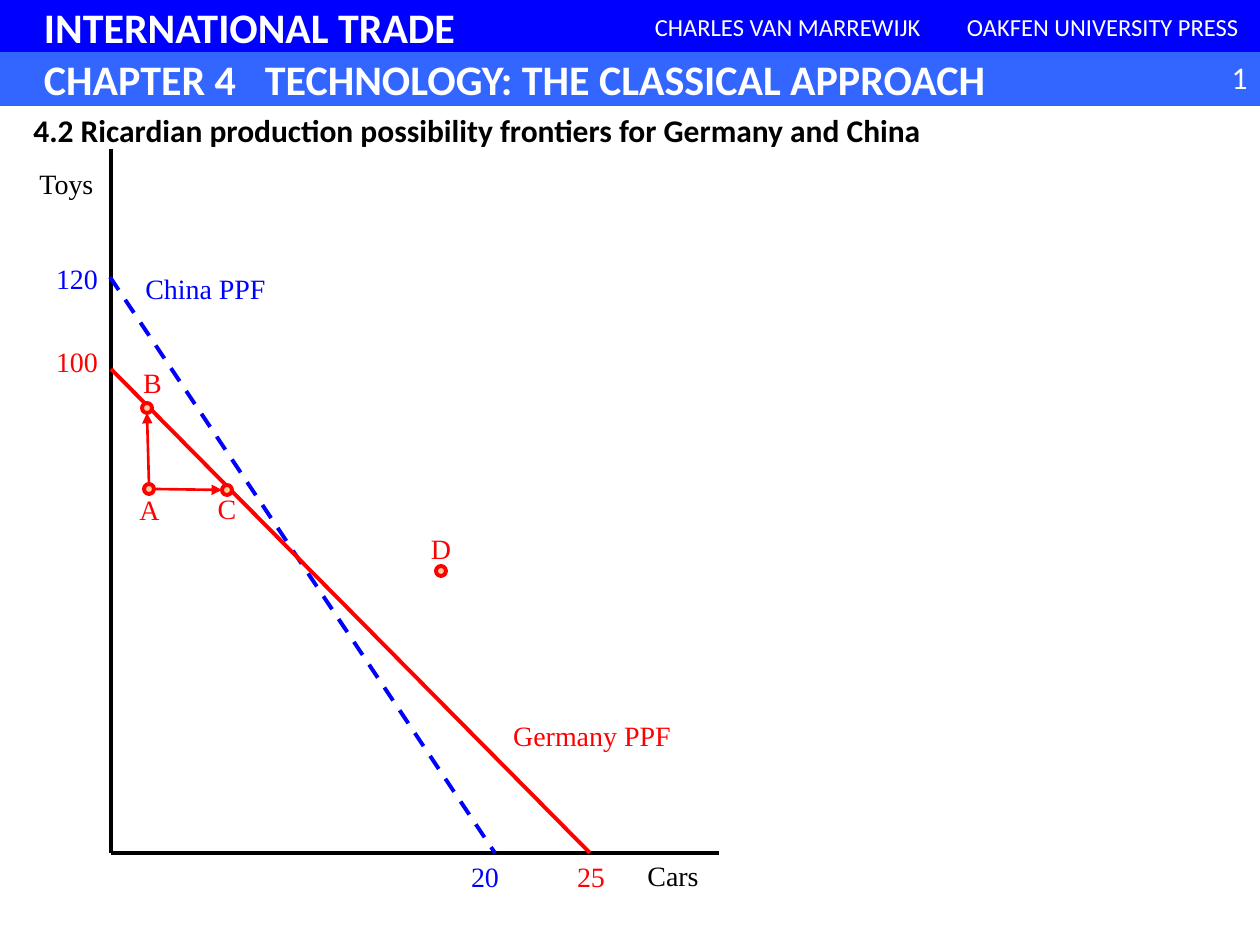
from lxml import etree
from pptx import Presentation
from pptx.dml.color import RGBColor
from pptx.enum.dml import MSO_LINE as Dash
from pptx.enum.shapes import MSO_CONNECTOR as Link, MSO_SHAPE as Shape
from pptx.enum.text import MSO_ANCHOR as Anchor, PP_ALIGN as Align
from pptx.oxml.ns import qn
from pptx.util import Emu, Pt

BLACK, WHITE, BLUE, RED = "000000", "FFFFFF", "0000FF", "FF0000"
SKY, PEACH = "3366FF", "FFCC99"
SERIF, SANS = "Times New Roman", "Calibri"
DOT = 10
ROW = 50


def px(count):
    return Emu(round(count * 914400 / 126))


def rgb(code):
    return RGBColor.from_string(code)


def write(shape, text, size, color, face, align, bold=False):
    para = shape.text_frame.paragraphs[0]
    para.text = text
    para.alignment = align
    font = para.font
    font.name, font.size, font.bold = face, Pt(size), bold
    font.color.rgb = rgb(color)
    return para


def add_solid(slide, kind, x, y, wide, high, fill, edge=None, weight=0.75):
    shape = slide.shapes.add_shape(kind, px(x), px(y), px(wide), px(high))
    shape.shadow.inherit = False
    shape.fill.solid()
    shape.fill.fore_color.rgb = rgb(fill)
    if edge:
        shape.line.color.rgb = rgb(edge)
        shape.line.width = Pt(weight)
    else:
        shape.line.fill.background()
    return shape


def add_band(slide, x, y, wide, high, fill, text, size, align, edge=None, inset=13):
    band = add_solid(slide, Shape.RECTANGLE, x, y, wide, high, fill, edge)
    band.text_frame.margin_left = px(inset)
    band.text_frame.vertical_anchor = Anchor.MIDDLE
    return write(band, text, size, WHITE, SANS, align, size == 24)


def add_tab(para, place):
    props = para._p.get_or_add_pPr()
    tabs = etree.Element(qn("a:tabLst"))
    etree.SubElement(tabs, qn("a:tab"), pos=str(px(place)), algn="l")
    props.find(qn("a:defRPr")).addprevious(tabs)


def add_text(slide, text, x, y, wide, color, size=16, face=SERIF,
             align=Align.CENTER, bold=False, wrap=False):
    box = slide.shapes.add_textbox(px(x), px(y), px(wide), px(ROW))
    box.text_frame.word_wrap = wrap
    write(box, text, size, color, face, align, bold)


def add_line(slide, start, end, color, weight=2.25, dash=None, arrow=False):
    line = slide.shapes.add_connector(Link.STRAIGHT, *map(px, start + end))
    line.line.color.rgb = rgb(color)
    line.line.width = Pt(weight)
    if dash:
        line.line.dash_style = dash
    if arrow:
        etree.SubElement(line.line._get_or_add_ln(), qn("a:tailEnd"), type="triangle")
    etree.SubElement(line._element.spPr, qn("a:effectLst"))


def add_header(slide):
    add_band(slide, 0, 0, 1260, 53, BLUE, "INTERNATIONAL TRADE", 24, Align.LEFT, inset=44)
    add_band(slide, 630, 0, 315, 53, BLUE, "CHARLES VAN MARREWIJK", 14, Align.CENTER, BLUE)
    add_band(slide, 945, 1, 315, 52, BLUE, "OAKFEN UNIVERSITY PRESS", 14, Align.CENTER, BLUE)
    title = add_band(slide, 0, 53, 1260, 52, SKY,
                     "CHAPTER 4\tTECHNOLOGY: THE CLASSICAL APPROACH",
                     24, Align.LEFT, SKY, 44)
    add_tab(title, 221)
    add_text(slide, "1", 1176, 52, 84, WHITE, 18, SANS, Align.RIGHT, wrap=True)
    add_text(slide, "4.2 Ricardian production possibility frontiers for Germany and China",
             21, 105, 955, BLACK, 18, SANS, Align.LEFT, True, True)


def add_graph(slide):
    root = (111, 853)
    add_line(slide, (111, 149), root, BLACK)
    add_line(slide, root, (719, 853), BLACK)
    add_line(slide, (110, 277), (495, 853), BLUE, dash=Dash.DASH)
    add_line(slide, (111, 369), (590, 853), RED)
    for x, y in ((142, 403), (222, 485), (144, 484), (436, 566)):
        add_solid(slide, Shape.OVAL, x, y, DOT, DOT, PEACH, RED, 2.25)
    add_line(slide, (154, 489), (222, 490), RED, 1.5, arrow=True)
    add_line(slide, (149, 484), (147, 413), RED, 1.5, arrow=True)


def add_labels(slide):
    labels = (
        ("Toys", 21, 160, 91, BLACK),
        ("Cars", 627, 852, 92, BLACK),
        ("120", 38, 255, 78, BLUE),
        ("20", 455, 853, 60, BLUE),
        ("China PPF", 116, 265, 179, BLUE),
        ("100", 38, 338, 78, RED),
        ("25", 561, 853, 60, RED),
        ("Germany PPF", 474, 712, 236, RED),
        ("A", 126, 486, 47, RED),
        ("B", 129, 359, 47, RED),
        ("C", 203, 485, 48, RED),
        ("D", 417, 525, 48, RED),
    )
    for label in labels:
        add_text(slide, *label)


def main():
    deck = Presentation()
    deck.slide_width, deck.slide_height = px(1260), px(945)
    slide = deck.slides.add_slide(deck.slide_layouts[6])
    add_header(slide)
    add_graph(slide)
    add_labels(slide)
    deck.save("out.pptx")


if __name__ == "__main__":
    main()
